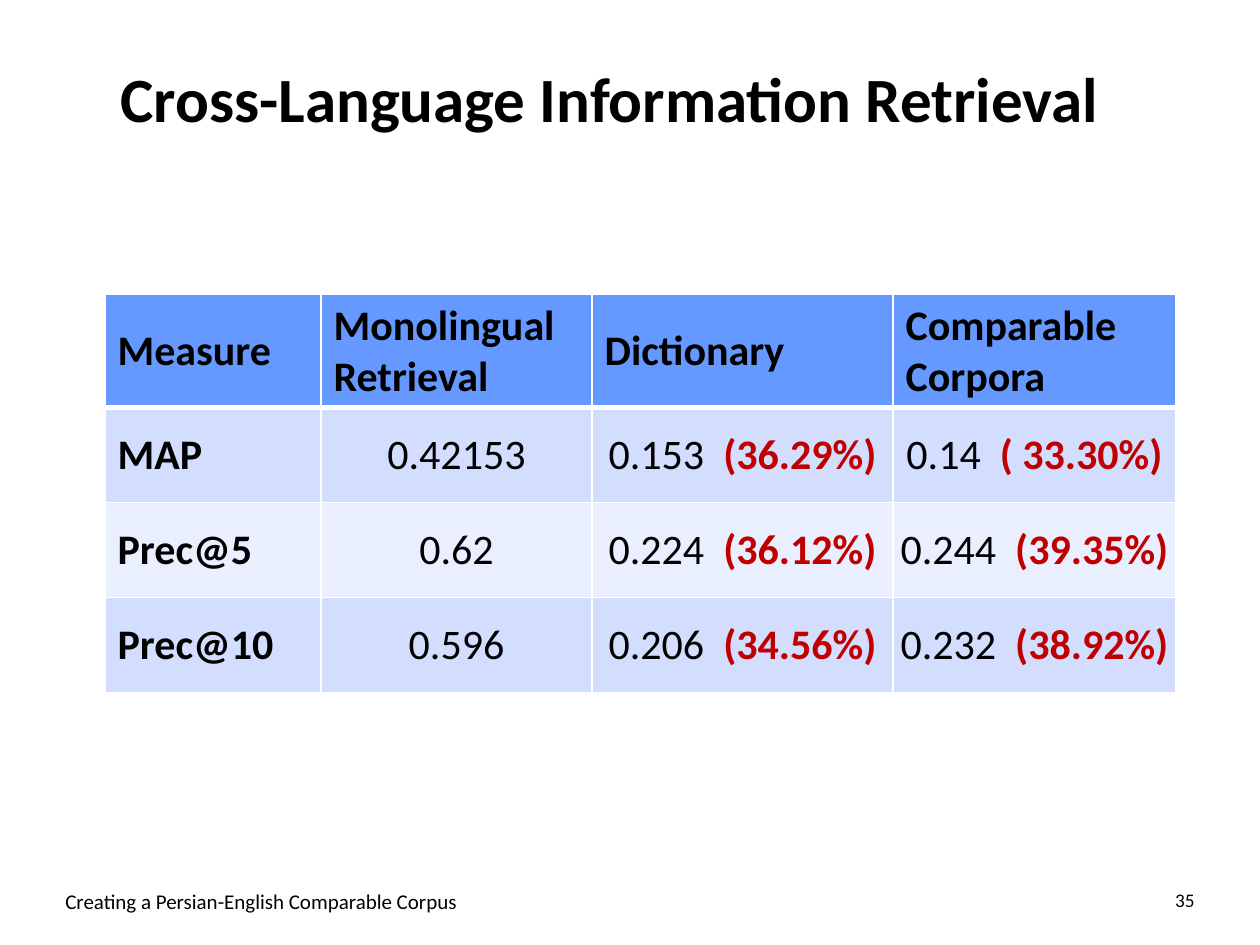
"""Build the cross-language information retrieval results slide."""
from lxml.etree import SubElement
from pptx import Presentation
from pptx.dml.color import RGBColor
from pptx.enum.text import MSO_ANCHOR, PP_ALIGN
from pptx.oxml.ns import qn
from pptx.util import Emu, Pt

PX = 914400 / 126
BLACK = RGBColor(0x00, 0x00, 0x00)
RED = RGBColor(0xC0, 0x00, 0x00)
HEADER = RGBColor(0x66, 0x99, 0xFF)
BANDS = [RGBColor(0xEA, 0xEF, 0xFF), RGBColor(0xD3, 0xDE, 0xFF)]
WHITE = "FFFFFF"


def px(n):
    return Emu(round(n * PX))


def style(r, size, bold=False, color=BLACK):
    r.font.name = "Calibri"
    r.font.size = Pt(size)
    r.font.bold = bold
    r.font.color.rgb = color


prs = Presentation()
prs.slide_width, prs.slide_height = px(1260), px(945)
s = prs.slides.add_slide(prs.slide_layouts[6])

texts = [
    ("35", (1081, 882, 126, 42), 11, False, PP_ALIGN.RIGHT),
    ("Cross-Language Information Retrieval", (95, 53, 1029, 89), 36, True, PP_ALIGN.CENTER),
    ("Creating a Persian-English Comparable Corpus", (53, 882, 466, 42), 12, False, PP_ALIGN.LEFT),
]
for text, box, size, bold, align in texts:
    tf = s.shapes.add_textbox(*map(px, box)).text_frame
    tf.word_wrap = True
    tf.text = text
    p = tf.paragraphs[0]
    p.alignment = align
    style(p.runs[0], size, bold)

rows = [
    [("Measure",), ("Monolingual Retrieval",), ("Dictionary",), ("Comparable Corpora",)],
    [("MAP",), ("0.42153",), ("0.153  ", "(36.29%)"), ("0.14  ", "( 33.30%)")],
    [("Prec@5",), ("0.62",), ("0.224  ", "(36.12%)"), ("0.244  ", "(39.35%)")],
    [("Prec@10",), ("0.596",), ("0.206  ", "(34.56%)"), ("0.232  ", "(38.92%)")],
]
widths = [216, 271, 301, 283]
heights = [113, 95, 95, 95]
frame = s.shapes.add_table(4, 4, px(105), px(294), px(sum(widths)), px(sum(heights)))
table = frame.table
for column, width in zip(table.columns, widths):
    column.width = px(width)
for row, height in zip(table.rows, heights):
    row.height = px(height)

for i, row in enumerate(rows):
    for j, parts in enumerate(row):
        cell = table.cell(i, j)
        cell.vertical_anchor = MSO_ANCHOR.MIDDLE
        label = i == 0 or j == 0
        p = cell.text_frame.paragraphs[0]
        p.alignment = PP_ALIGN.LEFT if label else PP_ALIGN.CENTER
        if not label:
            cell.margin_left = cell.margin_right = cell.margin_top = px(1)
            cell.margin_bottom = 0
        for k, part in enumerate(parts):
            r = p.add_run()
            r.text = part
            style(r, 24, label or k == 1, RED if k else BLACK)
        tc_pr = cell._tc.get_or_add_tcPr()
        for side in ("lnL", "lnR", "lnT", "lnB"):
            heavy = (i, side) in ((0, "lnB"), (1, "lnT"))
            ln = SubElement(tc_pr, qn(f"a:{side}"), w=str(Pt(3 if heavy else 1)))
            fill = SubElement(ln, qn("a:solidFill"))
            SubElement(fill, qn("a:srgbClr"), val=WHITE)
        cell.fill.solid()
        cell.fill.fore_color.rgb = BANDS[i % 2] if i else HEADER

prs.save("out.pptx")
